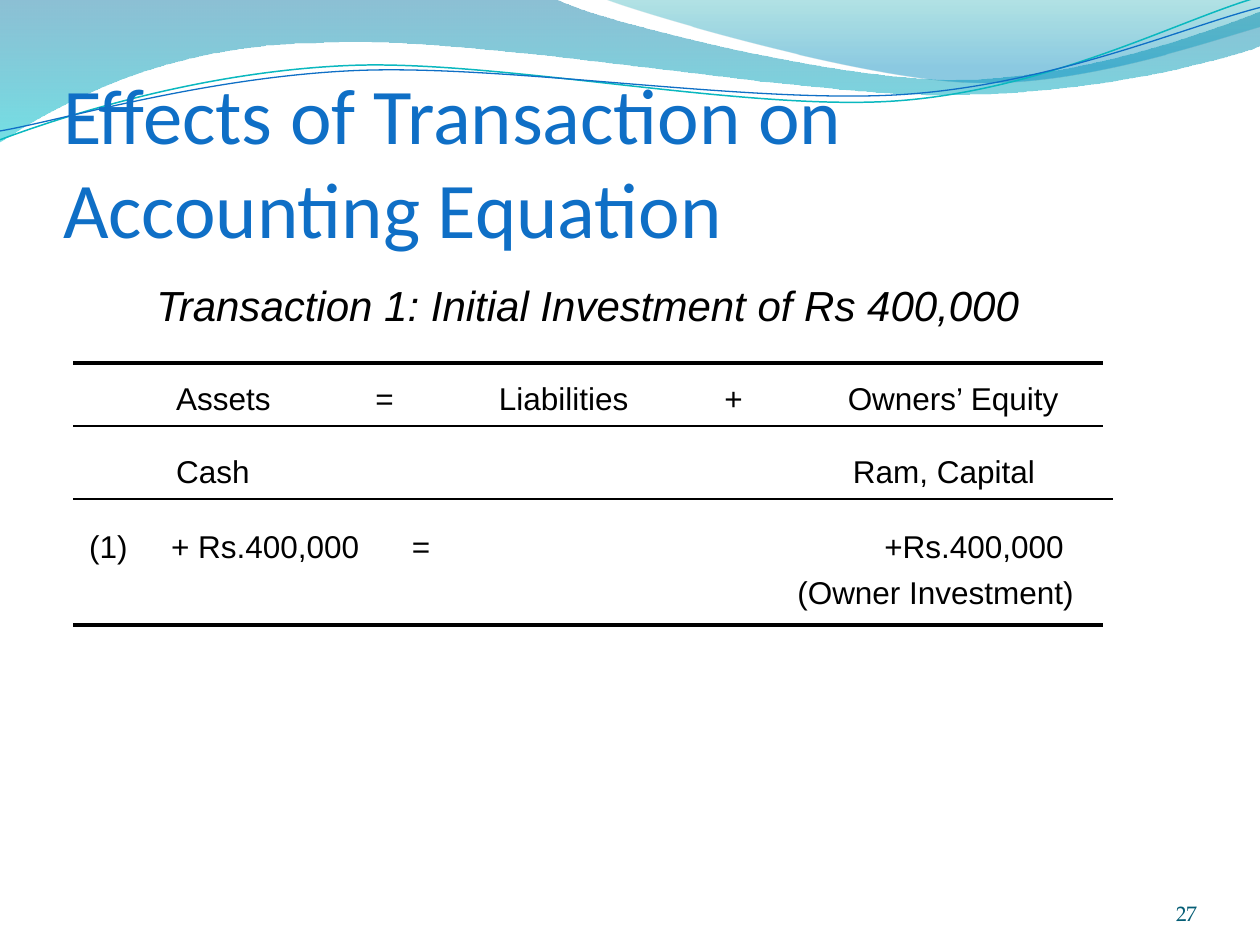
from dataclasses import dataclass
from math import cos, radians, sin

from lxml.etree import SubElement
from pptx import Presentation
from pptx.dml.color import RGBColor
from pptx.enum.shapes import MSO_CONNECTOR
from pptx.enum.text import MSO_ANCHOR, PP_ALIGN
from pptx.oxml.ns import qn
from pptx.util import Inches, Pt


@dataclass(frozen=True)
class Theme:
    black: str = "000000"
    blue: str = "0F6FC6"
    teal: str = "0AB8BF"
    page_number: str = "045D75"
    wide_wave: tuple = ((0, "0074A1", 45), (1, "00C6CF", 55))
    short_wave: tuple = ((0, "00A1A9", 30), (0.8, "008BBF", 45))
    body_font: str = "Arial"
    title_font: str = "Calibri"
    number_font: str = "TeX Gyre Pagella"
    title_size: float = 45
    subtitle_size: float = 24
    body_size: float = 18
    number_size: float = 12
    thin: float = 0.75
    medium: float = 0.85
    thick: float = 2.25


THEME = Theme()
TABLE_LEFT = 0.58
TABLE_RIGHT = 8.75
INSET = 0.1
STRAND_TILT = -2.7

WIDE_WAVE = [
    (0, -0.01), (4.4, -0.01),
    ((4.76, 0.17), (6.64, 0.63), (7.58, 0.63)),
    ((8.53, 0.63), (9.58, 0.26), (10, 0.09)),
    (10.01, 0.36),
    ((9.83, 0.44), (8.7, 0.76), (7.46, 0.75)),
    ((6.22, 0.75), (3.82, 0.28), (2.57, 0.34)),
    ((1.29, 0.35), (0.46, 0.83), (-0.01, 1.13)),
]
SHORT_WAVE = [
    (4.79, -0.01),
    ((5.09, 0.11), (6.82, 0.62), (7.69, 0.65)),
    ((8.56, 0.69), (9.61, 0.32), (10, 0.21)),
    (10, 0),
]
TEAL_STRAND = [
    (0, 1.11),
    ((0.48, 0.93), (1.58, 0.57), (2.77, 0.52)),
    ((3.95, 0.47), (5.93, 0.89), (7.13, 0.8)),
    ((8.33, 0.71), (9.38, 0.15), (9.98, -0.02)),
]
BLUE_STRAND = [
    (0, 1.04),
    ((0.47, 0.96), (1.64, 0.61), (2.83, 0.56)),
    ((4.03, 0.51), (5.97, 0.83), (7.17, 0.75)),
    ((8.36, 0.67), (9.41, 0.21), (10, 0.06)),
]

ROWS = [
    (0.42, 2.96, 8.12, [(1.4, "Assets"), (2.98, "="), (3.96, "Liabilities"),
                        (5.75, "+"), (6.73, "Owners’ Equity")]),
    (0.33, 3.54, 7.99, [(1.4, "Cash"), (6.77, "Ram, Capital")]),
    (0.33, 4.13, 8.23, [(0.71, "(1)"), (1.36, "+ Rs.400,000"), (3.27, "="),
                        (7.02, "+Rs.400,000")]),
]
RULES = [
    (2.88, TABLE_RIGHT, THEME.thick),
    (3.38, TABLE_RIGHT, THEME.thin),
    (3.96, 8.83, THEME.thin),
    (4.96, TABLE_RIGHT, THEME.thick),
]


def is_curve(part):
    return len(part) == 3


def turn(point, center, degrees):
    angle = radians(degrees)
    x, y = point[0] - center[0], point[1] - center[1]
    return (center[0] + x * cos(angle) - y * sin(angle),
            center[1] + x * sin(angle) + y * cos(angle))


def add_outline(slide, outline, closed):
    anchors = [part[-1] if is_curve(part) else part for part in outline]
    points = [(Inches(x), Inches(y)) for x, y in anchors]
    builder = slide.shapes.build_freeform(*points[0])
    builder.add_line_segments(points[1:], close=closed)
    shape = builder.convert_to_shape()
    shape.shadow.inherit = False
    for segment, part in zip(list(shape.element.iter(qn("a:lnTo"))), outline[1:]):
        if is_curve(part):
            curve = segment.getparent().makeelement(qn("a:cubicBezTo"))
            for x, y in part:
                SubElement(curve, qn("a:pt"), x=str(int(Inches(x) - shape.left)),
                           y=str(int(Inches(y) - shape.top)))
            segment.getparent().replace(segment, curve)
    return shape


def add_wave(slide, outline, stops):
    shape = add_outline(slide, outline, True)
    shape.line.fill.background()
    shape.fill.gradient()
    shape.fill.gradient_angle = 270
    for stop, (position, color, _) in zip(shape.fill.gradient_stops, stops):
        stop.position = position
        stop.color.rgb = RGBColor.from_string(color)
    for element, (_, _, opacity) in zip(shape.element.iter(qn("a:srgbClr")), stops):
        SubElement(element, qn("a:alpha"), val=str(opacity * 1000))


def add_strand(slide, outline, color, width):
    start, end = outline[0], outline[-1][-1]
    center = ((start[0] + end[0]) / 2, (start[1] + end[1]) / 2)
    level = [
        tuple(turn(point, center, -STRAND_TILT) for point in part) if is_curve(part)
        else turn(part, center, -STRAND_TILT)
        for part in outline
    ]
    shape = add_outline(slide, level, False)
    middle = (shape.left + shape.width / 2) / Inches(1), (shape.top + shape.height / 2) / Inches(1)
    x, y = turn(middle, center, STRAND_TILT)
    shape.left += Inches(x - middle[0])
    shape.top += Inches(y - middle[1])
    shape.rotation = STRAND_TILT
    shape.fill.background()
    shape.line.color.rgb = RGBColor.from_string(color)
    shape.line.width = Pt(width)


def add_rule(slide, top, right, width):
    rule = slide.shapes.add_connector(
        MSO_CONNECTOR.STRAIGHT, Inches(TABLE_LEFT), Inches(top), Inches(right), Inches(top)
    )
    rule.line.color.rgb = RGBColor.from_string(THEME.black)
    rule.line.width = Pt(width)
    SubElement(rule.element.spPr, qn("a:effectLst"))


def add_text(slide, text, left, top, width, height, *, size=THEME.body_size,
             font=THEME.body_font, color=THEME.black, italic=False, align=PP_ALIGN.LEFT,
             anchor=MSO_ANCHOR.TOP, insets=(INSET, 0.05, INSET, 0.05)):
    box = slide.shapes.add_textbox(Inches(left), Inches(top), Inches(width), Inches(height))
    frame = box.text_frame
    frame.word_wrap = True
    frame.vertical_anchor = anchor
    frame.margin_left, frame.margin_top, frame.margin_right, frame.margin_bottom = map(Inches, insets)
    paragraph = frame.paragraphs[0]
    paragraph.alignment = align
    run = paragraph.add_run()
    run.text = text
    run.font.size = Pt(size)
    run.font.name = font
    run.font.italic = italic
    run.font.color.rgb = RGBColor.from_string(color)
    return paragraph


def add_row(slide, left, top, width, entries):
    text = "".join("\t" + label for _, label in entries)
    paragraph = add_text(slide, text, left, top, width, 0.4, insets=(INSET, 0.05, 0, 0.05))
    tab_list = SubElement(paragraph._p.get_or_add_pPr(), qn("a:tabLst"))
    for position, _ in entries:
        offset = Inches(position - left - INSET)
        SubElement(tab_list, qn("a:tab"), pos=str(int(offset)), algn="l")


def main():
    presentation = Presentation()
    presentation.slide_width = Inches(10)
    presentation.slide_height = Inches(7.5)
    slide = presentation.slides.add_slide(presentation.slide_layouts[6])

    add_wave(slide, WIDE_WAVE, THEME.wide_wave)
    add_wave(slide, SHORT_WAVE, THEME.short_wave)
    add_strand(slide, TEAL_STRAND, THEME.teal, THEME.medium)
    add_strand(slide, BLUE_STRAND, THEME.blue, THEME.thin)

    add_text(slide, "Effects of Transaction on Accounting Equation", 0.5, 0.77, 9.08, 1.25,
             size=THEME.title_size, font=THEME.title_font, color=THEME.blue,
             anchor=MSO_ANCHOR.BOTTOM, insets=(0, 0.05, 0, 0))
    add_text(slide, "27", 8.67, 6.95, 0.83, 0.4, size=THEME.number_size,
             font=THEME.number_font, color=THEME.page_number, align=PP_ALIGN.RIGHT,
             anchor=MSO_ANCHOR.BOTTOM, insets=(0, 0, 0, 0))
    for row in ROWS:
        add_row(slide, *row)
    add_text(slide, "Transaction 1: Initial Investment of Rs 400,000", TABLE_LEFT, 2.17,
             TABLE_RIGHT - TABLE_LEFT, 0.5, size=THEME.subtitle_size, italic=True,
             align=PP_ALIGN.CENTER)
    add_text(slide, "(Owner Investment)", 6.23, 4.5, 2.43, 0.4)
    for rule in RULES:
        add_rule(slide, *rule)

    presentation.save("out.pptx")


if __name__ == "__main__":
    main()
